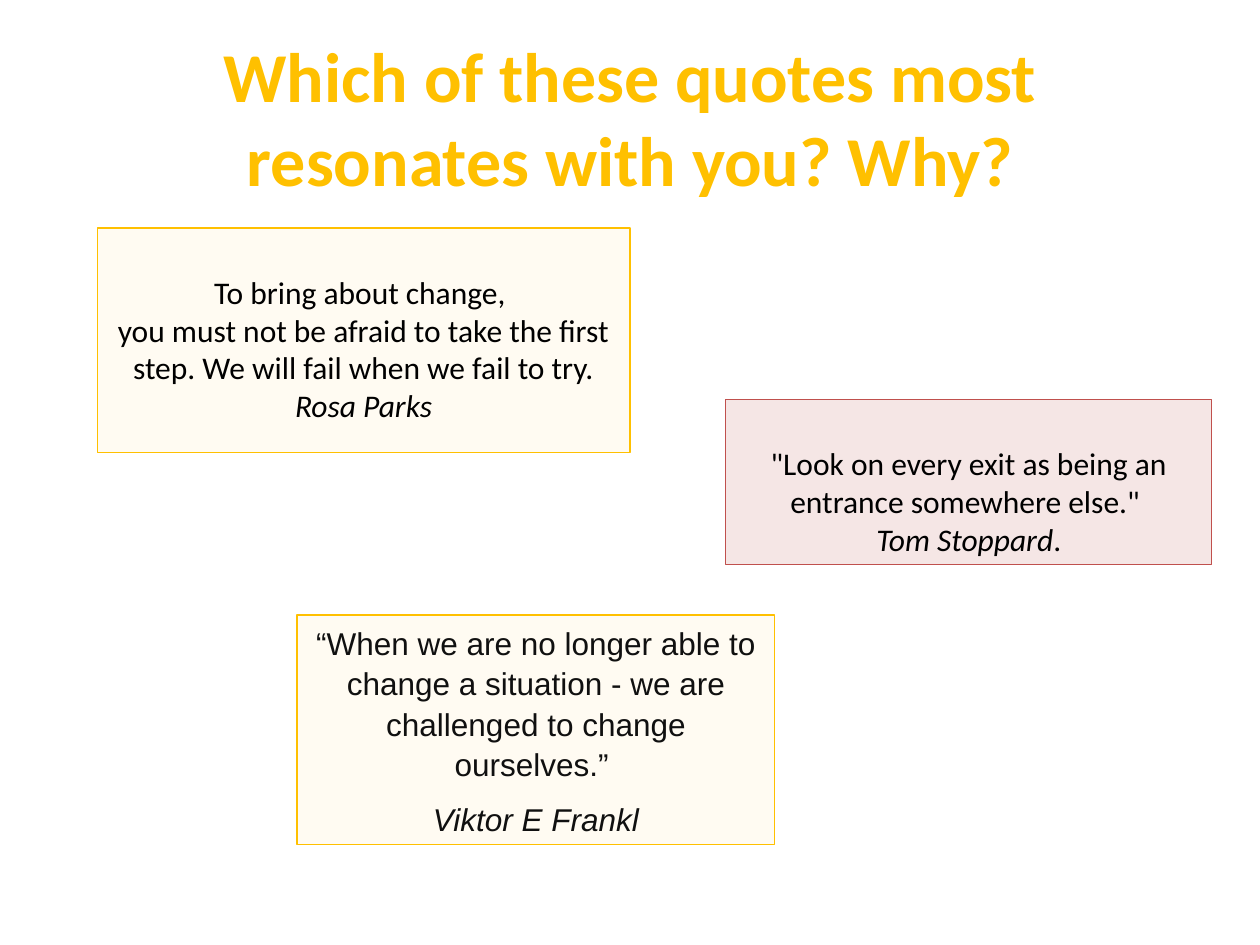
"""Build a slide of three quotes under one question."""
from dataclasses import dataclass

from lxml.etree import SubElement
from pptx import Presentation
from pptx.dml.color import RGBColor
from pptx.enum.shapes import MSO_SHAPE
from pptx.enum.text import MSO_ANCHOR, MSO_AUTO_SIZE, PP_ALIGN
from pptx.oxml.ns import qn
from pptx.util import Cm, Pt


@dataclass(frozen=True)
class Theme:
    """Colours, fonts and type sizes of the slide."""
    gold: str = "FFC000"
    rose: str = "F2DCDB"
    red: str = "C0504D"
    black: str = "000000"
    ink: str = "101010"
    sans: str = "Calibri"
    alt: str = "Arial"
    head: int = 40
    text: int = 18
    rule: float = 0.75


THEME = Theme()


def style(para, face, size, tone, bold=False):
    """Centre a paragraph and set its font."""
    para.alignment = PP_ALIGN.CENTER
    font = para.font
    font.name, font.size, font.bold = face, Pt(size), bold
    font.color.rgb = RGBColor.from_string(tone)


def add_title(slide, text):
    """Place and format the title."""
    title = slide.shapes.title
    title.left, title.top = Cm(1.27), Cm(0.76)
    title.width, title.height = Cm(22.86), Cm(3.18)
    frame = title.text_frame
    frame.word_wrap, frame.auto_size = True, MSO_AUTO_SIZE.NONE
    frame.vertical_anchor = MSO_ANCHOR.MIDDLE
    frame.text = text
    style(frame.paragraphs[0], THEME.sans, THEME.head, THEME.gold, True)


def add_box(slide, area, fill, alpha, line):
    """Add a tinted rectangle and return its text frame."""
    box = slide.shapes.add_shape(MSO_SHAPE.RECTANGLE, *map(Cm, area))
    box.shadow.inherit = False
    box.fill.solid()
    box.fill.fore_color.rgb = RGBColor.from_string(fill)
    tint = box.fill._xPr.find(qn("a:solidFill"))[0]
    SubElement(tint, qn("a:alpha"), val=str(alpha * 1000))
    box.line.color.rgb = RGBColor.from_string(line)
    box.line.width = Pt(THEME.rule)
    frame = box.text_frame
    frame.word_wrap = True
    frame.vertical_anchor = MSO_ANCHOR.TOP
    return frame


def add_quote(frame, lines, name, end="", face=THEME.sans, tone=THEME.black):
    """Write the quote lines, then the speaker in italics."""
    for text in lines:
        para = frame.paragraphs[0] if not frame.text else frame.add_paragraph()
        para.text = text
        style(para, face, THEME.text, tone)
    para = frame.add_paragraph()
    style(para, face, THEME.text, tone)
    run = para.add_run()
    run.text, run.font.italic = name, True
    if end:
        para.add_run().text = end


def main():
    """Build and save the slide."""
    deck = Presentation()
    deck.slide_width, deck.slide_height = Cm(25.4), Cm(19.05)
    slide = deck.slides.add_slide(deck.slide_layouts[5])
    add_title(slide, "Which of these quotes most resonates with you? Why?")

    parks = add_box(slide, (1.96, 4.6, 10.74, 4.52), THEME.gold, 5, THEME.gold)
    add_quote(parks, ["To bring about change, ",
                      "you must not be afraid to take the first step. "
                      "We will fail when we fail to try."], "Rosa Parks")

    stop = add_box(slide, (14.63, 8.05, 9.8, 3.33), THEME.rose, 70, THEME.red)
    add_quote(stop, ['"Look on every exit as being an entrance somewhere else." '],
              "Tom Stoppard", ".")
    for frame in (parks, stop):
        frame.margin_top = Cm(0.9)

    frankl = add_box(slide, (5.99, 12.4, 9.63, 4.62), THEME.gold, 5, THEME.gold)
    add_quote(frankl, ["“When we are no longer able to change a situation - "
                       "we are challenged to change ourselves.” "],
              "Viktor E Frankl", face=THEME.alt, tone=THEME.ink)
    for para in frankl.paragraphs:
        para.line_spacing, para.space_after = 1.07, Pt(8)

    deck.save("out.pptx")


if __name__ == "__main__":
    main()
